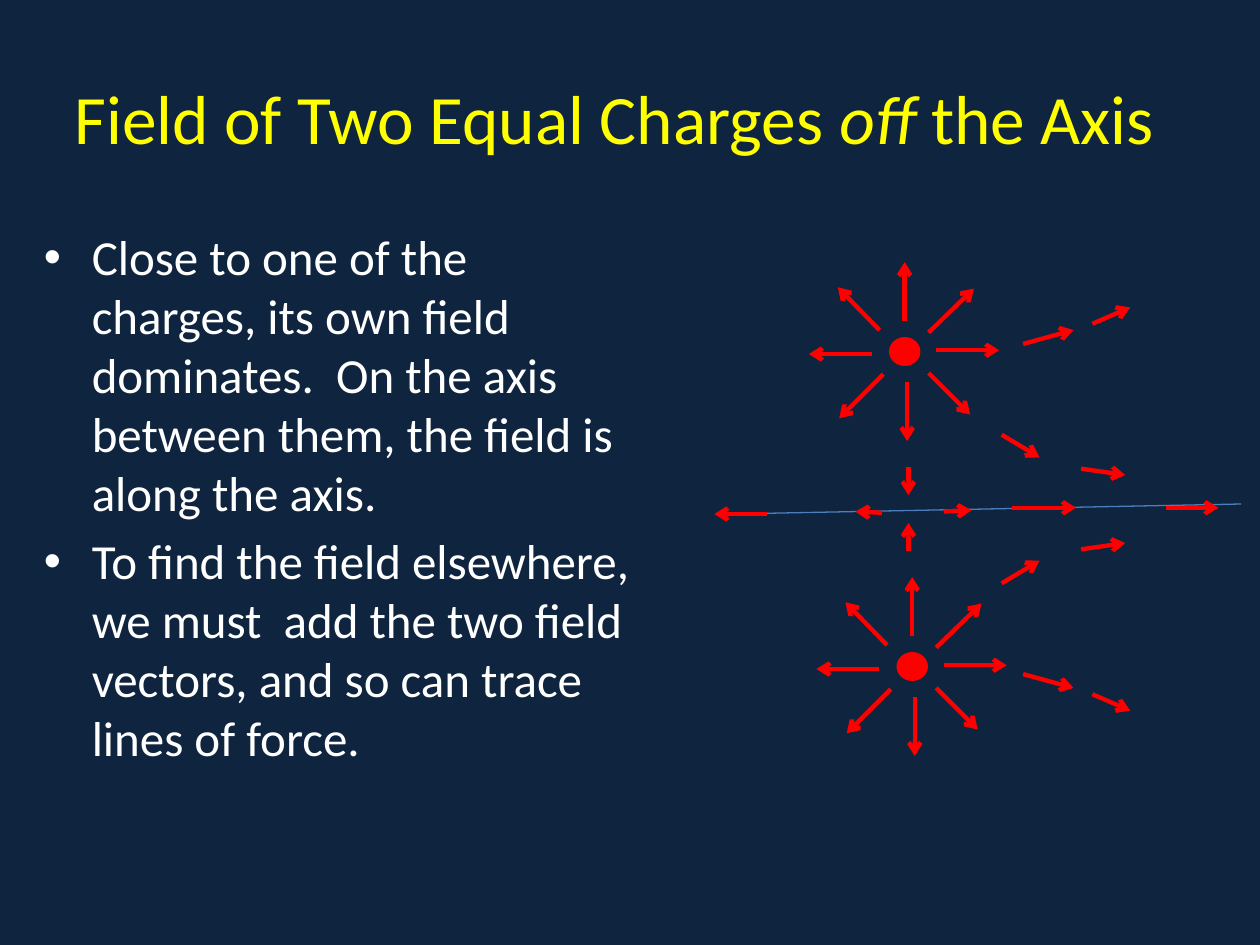
from typing import NamedTuple

from lxml import etree
from pptx import Presentation
from pptx.dml.color import RGBColor
from pptx.enum.shapes import MSO_CONNECTOR, MSO_SHAPE
from pptx.enum.text import MSO_ANCHOR, MSO_AUTO_SIZE, PP_ALIGN
from pptx.oxml.ns import qn
from pptx.util import Inches, Pt

LINE, OVAL = MSO_CONNECTOR.STRAIGHT, MSO_SHAPE.OVAL
CENTER, MIDDLE, NO_FIT = PP_ALIGN.CENTER, MSO_ANCHOR.MIDDLE, MSO_AUTO_SIZE.NONE
FONT = "Calibri"
NAVY, YELLOW, WHITE, RED, BLUE = "0F243E", "FFFF00", "FFFFFF", "FF0000", "4B7EBC"
MID = 4.04  # height of the mirror line between the charges


class Vec(NamedTuple):
    x1: float
    y1: float
    x2: float
    y2: float

    def shift(self, x: float, y: float) -> "Vec":
        return Vec(self.x1 + x, self.y1 + y, self.x2 + x, self.y2 + y)

    def flip(self) -> "Vec":
        return Vec(self.x1, 2 * MID - self.y1, self.x2, 2 * MID - self.y2)


class Charge(NamedTuple):
    x: float
    y: float


CHARGES = [Charge(7.18, 2.79), Charge(7.24, 5.29)]

# Arrows around a charge, measured from its centre
RAYS = [
    Vec(0, -0.24, 0, -0.71),
    Vec(0.19, 0.17, 0.52, 0.5),
    Vec(0.25, -0.01, 0.75, -0.01),
    Vec(0.02, 0.24, 0.02, 0.71),
    Vec(-0.17, 0.18, -0.52, 0.53),
    Vec(-0.26, 0.02, -0.76, 0.02),
    Vec(-0.2, -0.17, -0.53, -0.51),
    Vec(0.19, -0.15, 0.55, -0.5),
]

# Arrows above the axis that are mirrored below it
PAIRS = [
    Vec(8.12, 2.73, 8.52, 2.62),
    Vec(8.67, 2.57, 8.97, 2.44),
    Vec(7.95, 3.45, 8.25, 3.63),
    Vec(8.58, 3.72, 8.93, 3.77),
    Vec(7.21, 3.71, 7.21, 3.93),
]

AXIS = Vec(5.77, 4.08, 9.85, 4)
ALONG = [
    Vec(8.03, 4.03, 8.54, 4.03),
    Vec(9.25, 4.03, 9.67, 4.03),
    Vec(7.49, 4.06, 7.71, 4.05),
    Vec(7, 4.07, 6.79, 4.06),
    Vec(6.09, 4.08, 5.67, 4.08),
]

POINTS = [
    "Close to one of the charges, its own field dominates.  "
    "On the axis between them, the field is along the axis.",
    "To find the field elsewhere, we must  add the two field vectors, "
    "and so can trace lines of force.",
]


def paint(color, code: str) -> None:
    color.rgb = RGBColor.from_string(code)


def style(par, size: float, code: str) -> None:
    par.font.name, par.font.size = FONT, Pt(size)
    paint(par.font.color, code)


def draw_line(shapes, vec: Vec, code: str = RED, width: float = 2.5,
              head: bool = True) -> None:
    line = shapes.add_connector(LINE, *map(Inches, vec))
    line.line.width = Pt(width)
    paint(line.line.color, code)
    if head:
        etree.SubElement(line.line._get_or_add_ln(), qn("a:tailEnd"), type="arrow")
    etree.SubElement(line._element.spPr, qn("a:effectLst"))


def draw_charge(shapes, charge: Charge) -> None:
    wide, high = 0.25, 0.23
    dot = shapes.add_shape(OVAL, Inches(charge.x - wide / 2),
                           Inches(charge.y - high / 2), Inches(wide), Inches(high))
    dot.shadow.inherit = False
    dot.fill.solid()
    paint(dot.fill.fore_color, RED)
    dot.line.fill.background()
    for ray in RAYS:
        draw_line(shapes, ray.shift(charge.x, charge.y))


def add_title(title) -> None:
    title.left, title.top = Inches(0.25), Inches(0.3)
    title.width, title.height = Inches(9.25), Inches(1.25)
    frame = title.text_frame
    frame.auto_size, frame.vertical_anchor = NO_FIT, MIDDLE
    par = frame.paragraphs[0]
    par.alignment = CENTER
    style(par, 39.6, YELLOW)
    for text in ("Field of Two Equal Charges ", "off", " the Axis"):
        run = par.add_run()
        run.text = text
        if text == "off":
            run.font.italic = True


def add_points(shapes) -> None:
    box = shapes.add_textbox(Inches(0.25), Inches(1.75), Inches(4.92), Inches(4.95))
    frame = box.text_frame
    frame.word_wrap = True
    for i, text in enumerate(POINTS):
        par = frame.add_paragraph() if i else frame.paragraphs[0]
        par.text = text
        par.space_before = Pt(5.6)
        style(par, 28, WHITE)
        props = par._p.get_or_add_pPr()
        props.set("marL", str(Inches(0.38)))
        props.set("indent", str(-Inches(0.38)))
        bullet = etree.Element(qn("a:buChar"), char="•")
        face = etree.Element(qn("a:buFont"), typeface="Arial")
        at = props.index(props.find(qn("a:defRPr")))
        props[at:at] = [face, bullet]


def main() -> None:
    deck = Presentation()
    deck.slide_width, deck.slide_height = Inches(10), Inches(7.5)
    slide = deck.slides.add_slide(deck.slide_layouts[5])
    shapes = slide.shapes
    slide.background.fill.solid()
    paint(slide.background.fill.fore_color, NAVY)

    # Text
    add_title(shapes.title)
    add_points(shapes)

    # Charges and axis
    for charge in CHARGES:
        draw_charge(shapes, charge)
    draw_line(shapes, AXIS, BLUE, 0.75, head=False)

    # Field arrows off and along the axis
    for vec in PAIRS:
        draw_line(shapes, vec)
        draw_line(shapes, vec.flip())
    for vec in ALONG:
        draw_line(shapes, vec)

    deck.save("out.pptx")


if __name__ == "__main__":
    main()
